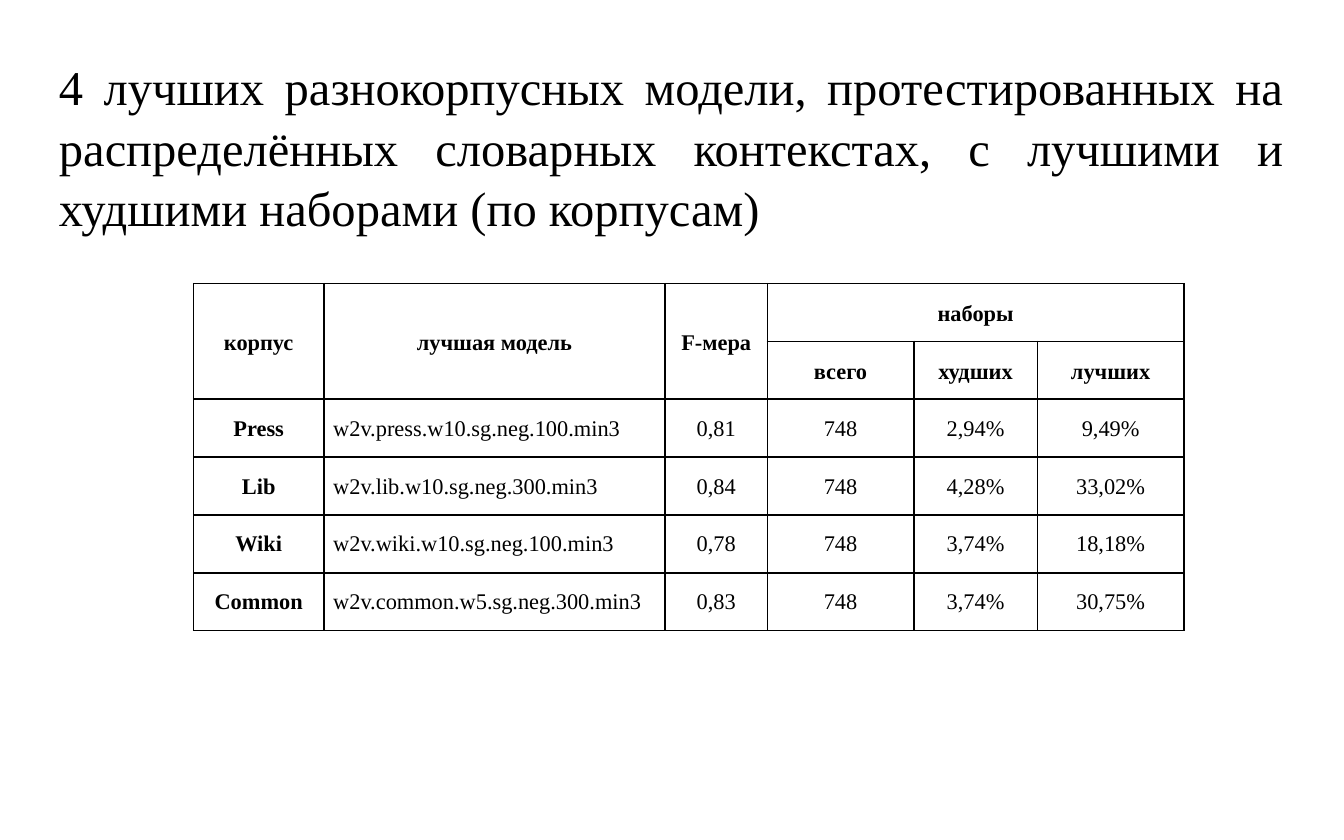
from lxml.etree import SubElement
from pptx import Presentation
from pptx.dml.color import RGBColor
from pptx.enum.text import MSO_ANCHOR, PP_ALIGN
from pptx.oxml.ns import qn
from pptx.util import Pt

BLACK = RGBColor(0, 0, 0)
WHITE = RGBColor(255, 255, 255)
FONT = "Times New Roman"
TITLE = ("4 лучших разнокорпусных модели, протестированных на распределённых "
         "словарных контекстах, с лучшими и худшими наборами (по корпусам)")
COLUMN_WIDTHS = [69.84, 182.88, 54.72, 78.48, 66.24, 78.48]
ROW_HEIGHT = 29.7
HEADER_ROWS = 2
MODEL_COLUMN = 1
ROWS = [
    ["корпус", "лучшая модель", "F-мера", "наборы", "", ""],
    ["", "", "", "всего", "худших", "лучших"],
    ["Press", "w2v.press.w10.sg.neg.100.min3", "0,81", "748", "2,94%", "9,49%"],
    ["Lib", "w2v.lib.w10.sg.neg.300.min3", "0,84", "748", "4,28%", "33,02%"],
    ["Wiki", "w2v.wiki.w10.sg.neg.100.min3", "0,78", "748", "3,74%", "18,18%"],
    ["Common", "w2v.common.w5.sg.neg.300.min3", "0,83", "748", "3,74%", "30,75%"],
]
MERGES = [(0, 0, 1, 0), (0, 1, 1, 1), (0, 2, 1, 2), (0, 3, 0, 5)]


def write_text(frame, text, size, align, bold=False, spacing=1.0):
    """Write one formatted paragraph into a text frame."""
    para = frame.paragraphs[0]
    para.alignment = align
    para.line_spacing = spacing
    span = para.add_run()
    span.text = text
    span.font.name = FONT
    span.font.size = Pt(size)
    span.font.bold = bold
    span.font.color.rgb = BLACK


def set_borders(cell):
    """Draw a thin black line on every side of a cell."""
    properties = cell._tc.get_or_add_tcPr()
    for index, side in enumerate(("a:lnL", "a:lnR", "a:lnT", "a:lnB")):
        line = SubElement(properties, qn(side), w=str(Pt(1)))
        fill = SubElement(line, qn("a:solidFill"))
        SubElement(fill, qn("a:srgbClr"), val=str(BLACK))
        properties.remove(line)
        properties.insert(index, line)


def add_title(page, left, top, width, height):
    """Place the justified heading in the given box."""
    box = page.shapes.add_textbox(Pt(left), Pt(top), Pt(width), Pt(height))
    frame = box.text_frame
    frame.word_wrap = True
    frame.margin_left = frame.margin_right = Pt(7.2)
    frame.margin_top = frame.margin_bottom = Pt(7.2)
    write_text(frame, TITLE, 26, PP_ALIGN.JUSTIFY, spacing=1.04)


def add_model_table(page, left, top, width, height):
    """Place the table of best models in the given box."""
    table = page.shapes.add_table(len(ROWS), len(COLUMN_WIDTHS), Pt(left),
                                  Pt(top), Pt(width), Pt(height)).table
    table.first_row = table.horz_banding = False
    for column, column_width in zip(table.columns, COLUMN_WIDTHS):
        column.width = Pt(column_width)
    for row in table.rows:
        row.height = Pt(height / len(ROWS))
    for first_row, first_column, last_row, last_column in MERGES:
        table.cell(first_row, first_column).merge(table.cell(last_row, last_column))
    for row_index, texts in enumerate(ROWS):
        header = row_index < HEADER_ROWS
        for column_index, text in enumerate(texts):
            cell = table.cell(row_index, column_index)
            cell.fill.solid()
            cell.fill.fore_color.rgb = WHITE
            cell.margin_left = cell.margin_right = Pt(5)
            cell.margin_top = cell.margin_bottom = Pt(7.2)
            cell.vertical_anchor = MSO_ANCHOR.MIDDLE if header else MSO_ANCHOR.TOP
            set_borders(cell)
            if text:
                left_aligned = column_index == MODEL_COLUMN and not header
                write_text(cell.text_frame, text, 12,
                           PP_ALIGN.LEFT if left_aligned else PP_ALIGN.CENTER,
                           bold=header or column_index == 0, spacing=1.15)
            else:
                cell.text_frame.paragraphs[0].font.size = Pt(12)


def main():
    """Build and save the deck."""
    deck = Presentation()
    deck.slide_width, deck.slide_height = Pt(720), Pt(450)
    page = deck.slides.add_slide(deck.slide_layouts[6])
    add_title(page, 24.5, 22.3, 671, 50.4)
    add_model_table(page, 103.7, 151.9, sum(COLUMN_WIDTHS), ROW_HEIGHT * len(ROWS))
    deck.save("out.pptx")


if __name__ == "__main__":
    main()
